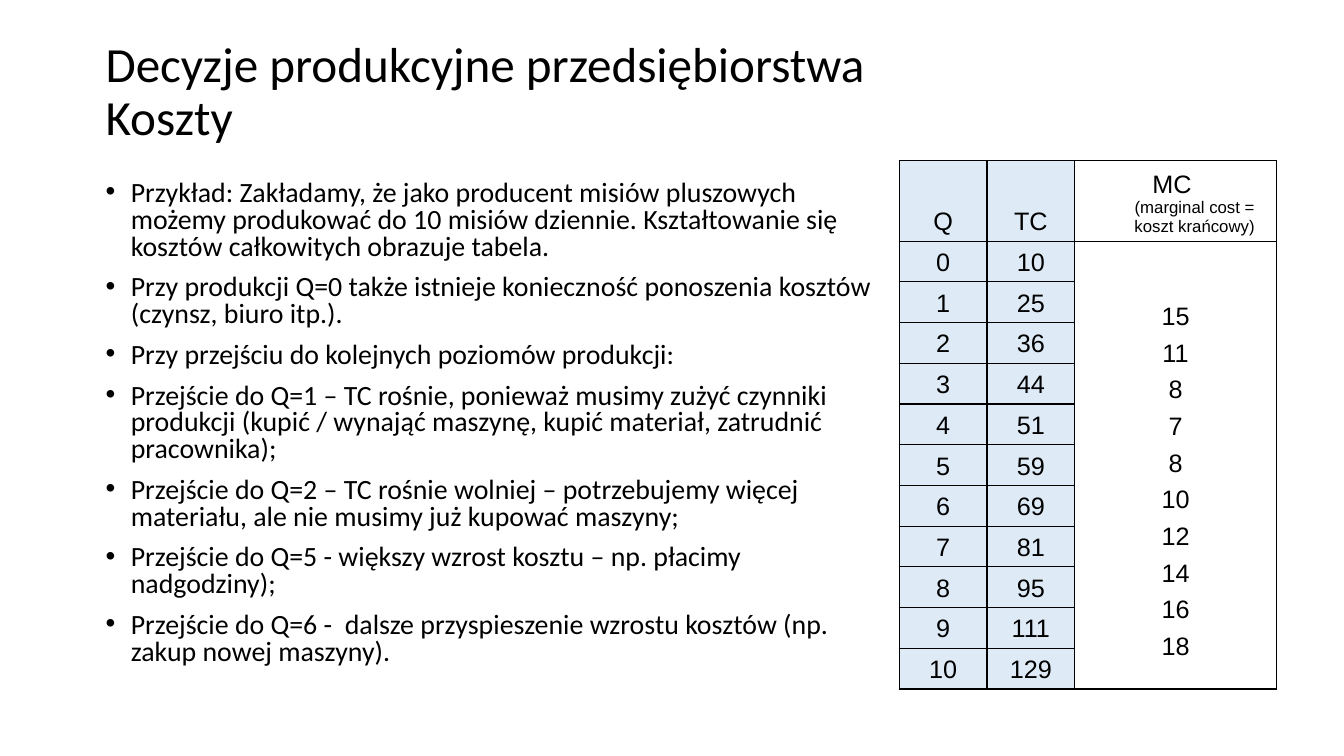
from itertools import pairwise

from lxml.etree import SubElement
from pptx import Presentation
from pptx.dml.color import RGBColor
from pptx.enum.text import MSO_ANCHOR, PP_ALIGN
from pptx.oxml.ns import qn
from pptx.util import Inches, Pt

WIDTH, HEIGHT = Inches(13.33), Inches(7.5)
GRID_COLUMNS, GRID_ROWS = 32, 18
COLORS = {"text": "000000", "border": "000000", "shade": "DEEBF7"}

TITLE = "Decyzje produkcyjne przedsiębiorstwa \vKoszty"
BULLETS = [
    "Przykład: Zakładamy, że jako producent misiów pluszowych możemy produkować do 10 misiów "
    "dziennie. Kształtowanie się kosztów całkowitych obrazuje tabela.",
    "Przy produkcji Q=0 także istnieje konieczność ponoszenia kosztów (czynsz, biuro itp.).",
    "Przy przejściu do kolejnych poziomów produkcji:",
    "Przejście do Q=1 – TC rośnie, ponieważ musimy zużyć czynniki produkcji (kupić / wynająć "
    "maszynę, kupić materiał, zatrudnić pracownika);",
    "Przejście do Q=2 – TC rośnie wolniej – potrzebujemy więcej materiału, ale nie musimy już "
    "kupować maszyny;",
    "Przejście do Q=5 - większy wzrost kosztu – np. płacimy nadgodziny);",
    "Przejście do Q=6 -  dalsze przyspieszenie wzrostu kosztów (np. zakup nowej maszyny).",
]
MARGINAL_HEADER = "MC \v(marginal cost = koszt krańcowy)"
TOTAL_COSTS = [10, 25, 36, 44, 51, 59, 69, 81, 95, 111, 129]
TABLE_COLUMNS = [2.09, 2.09, 4.8]
HEADER_ROW, VALUE_ROW = 1.81, 0.97


def across(columns):
    """Return the length of a number of grid columns."""
    return round(WIDTH * columns / GRID_COLUMNS)


def down(rows):
    """Return the length of a number of grid rows."""
    return round(HEIGHT * rows / GRID_ROWS)


def format_runs(paragraph, font, size):
    """Give every run of a paragraph its font, size and colour."""
    for run in paragraph.runs:
        run.font.name = font
        run.font.size = Pt(size)
        run.font.color.rgb = RGBColor.from_string(COLORS["text"])


def hang(paragraph, indent):
    """Give a paragraph a hanging indent in inches."""
    properties = paragraph._p.get_or_add_pPr()
    properties.set("marL", str(Inches(indent)))
    properties.set("indent", str(-Inches(indent)))
    return properties


def add_text(slide, left, top, width, height, text, size, spacing):
    """Add a wrapping text box placed on the grid."""
    box = slide.shapes.add_textbox(across(left), down(top), across(width), down(height))
    frame = box.text_frame
    frame.word_wrap = True
    frame.text = text
    for paragraph in frame.paragraphs:
        paragraph.line_spacing = spacing
        format_runs(paragraph, "Calibri", size)
    return frame


def add_bullets(frame):
    """Turn the paragraphs of a text frame into bullets."""
    for paragraph in frame.paragraphs:
        paragraph.space_before = Pt(10)
        properties = hang(paragraph, 0.25)
        SubElement(properties, qn("a:buFont"), typeface="Arial")
        SubElement(properties, qn("a:buChar"), char="•")


def add_borders(cell):
    """Draw a thin line on each side of a cell."""
    properties = cell._tc.get_or_add_tcPr()
    for position, side in enumerate(("lnL", "lnR", "lnT", "lnB")):
        line = SubElement(properties, qn(f"a:{side}"), w=str(Pt(1)))
        fill = SubElement(line, qn("a:solidFill"))
        SubElement(fill, qn("a:srgbClr"), val=COLORS["border"])
        properties.insert(position, line)


def fill_cell(cell, text, indent=0.38, spacing=None):
    """Write centred text at the bottom of a cell."""
    cell.vertical_anchor = MSO_ANCHOR.BOTTOM
    cell.margin_left = cell.margin_right = Inches(0.11)
    cell.margin_top = cell.margin_bottom = Inches(0.05)
    cell.text_frame.text = text
    for paragraph in cell.text_frame.paragraphs:
        paragraph.alignment = PP_ALIGN.CENTER
        paragraph.line_spacing = spacing
        hang(paragraph, indent)
        format_runs(paragraph, "Arial", 18)


def style_table(table):
    """Set the sizes, fills and borders of the cost table."""
    table.first_row = table.horz_banding = False
    for column, width in zip(table.columns, TABLE_COLUMNS):
        column.width = across(width)
    for index, row in enumerate(table.rows):
        row.height = down(VALUE_ROW if index else HEADER_ROW)
        for number, cell in enumerate(row.cells):
            if number < 2:
                cell.fill.solid()
                cell.fill.fore_color.rgb = RGBColor.from_string(COLORS["shade"])
            else:
                cell.fill.background()
            add_borders(cell)


def add_cost_table(slide):
    """Add the table of quantity, total cost and marginal cost."""
    count = len(TOTAL_COSTS)
    height = HEADER_ROW + count * VALUE_ROW
    table = slide.shapes.add_table(
        count + 1, 3, across(21.41), down(3.82), across(sum(TABLE_COLUMNS)), down(height)
    ).table
    style_table(table)
    fill_cell(table.cell(0, 0), "Q", indent=0)
    fill_cell(table.cell(0, 1), "TC")
    fill_cell(table.cell(0, 2), MARGINAL_HEADER)
    table.cell(0, 2).text_frame.paragraphs[0].runs[1].font.size = Pt(12)
    for quantity, total in enumerate(TOTAL_COSTS):
        fill_cell(table.cell(quantity + 1, 0), str(quantity))
        fill_cell(table.cell(quantity + 1, 1), str(total))
    marginal = table.cell(1, 2)
    marginal.merge(table.cell(count, 2))
    steps = [str(after - before) for before, after in pairwise(TOTAL_COSTS)]
    fill_cell(marginal, "\n".join(steps), spacing=1.3)
    marginal.margin_bottom = Inches(0.28)


def main():
    """Build the slide on production costs."""
    presentation = Presentation()
    presentation.slide_width, presentation.slide_height = WIDTH, HEIGHT
    slide = presentation.slides.add_slide(presentation.slide_layouts[6])
    title = add_text(slide, 2.28, 0.72, 25.18, 3, TITLE, 35.1, 0.9)
    title.vertical_anchor = MSO_ANCHOR.MIDDLE
    body = add_text(slide, 2.28, 4.2, 19.15, 11.9, "\n".join(BULLETS), 19.9, 0.8)
    add_bullets(body)
    add_cost_table(slide)
    presentation.save("out.pptx")


if __name__ == "__main__":
    main()
